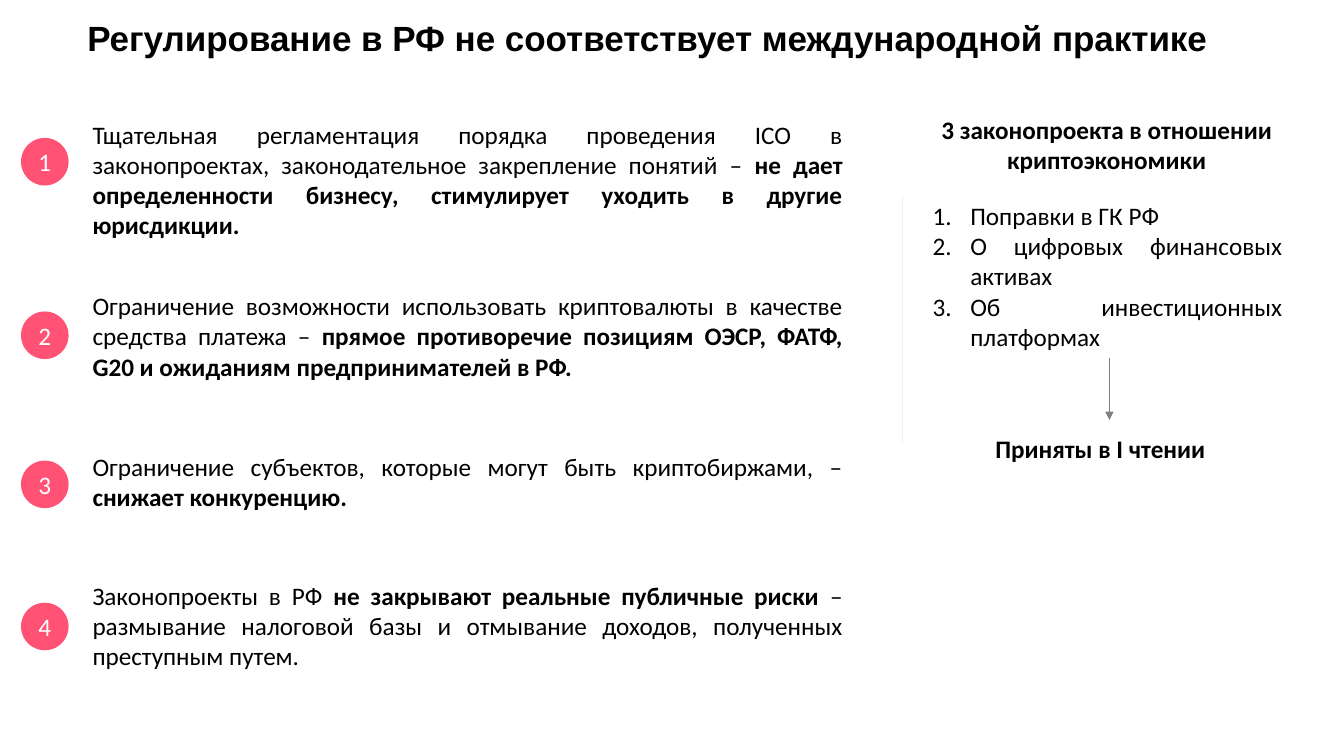
from dataclasses import dataclass

from lxml.etree import SubElement
from pptx import Presentation
from pptx.dml.color import RGBColor
from pptx.enum.shapes import MSO_CONNECTOR as Line, MSO_SHAPE as Form
from pptx.enum.text import MSO_ANCHOR as Anchor, MSO_AUTO_SIZE as Fit, PP_ALIGN as Align
from pptx.oxml.ns import qn
from pptx.shapes.connector import Connector
from pptx.slide import Slide
from pptx.text.text import TextFrame
from pptx.util import Pt

BLACK = RGBColor(0, 0, 0)
WHITE = RGBColor(255, 255, 255)
PINK = RGBColor(0xFF, 0x52, 0x75)
GREY = RGBColor(0x80, 0x80, 0x80)
PALE = RGBColor(0xF2, 0xF2, 0xF2)

DOT = 34
INDENT = 27


@dataclass
class Point:
    dot: float
    top: float
    high: float
    words: list[str]


@dataclass
class Note:
    left: float
    top: float
    wide: float
    high: float
    lines: list[list[str]]
    align: Align = Align.CENTER
    bold: bool = True
    font: str = "Calibri"
    size: float = 18


POINTS = [
    Point(98.5, 81.5, 94.5, [
        "Тщательная регламентация порядка проведения ICO в законопроектах, "
        "законодательное закрепление понятий – ",
        "не дает определенности бизнесу, стимулирует уходить в другие юрисдикции."]),
    Point(222.5, 204, 72.5, [
        "Ограничение возможности использовать криптовалюты в качестве средства платежа – ",
        "прямое противоречие позициям ОЭСР, ФАТФ, G20 и ожиданиям предпринимателей в РФ."]),
    Point(329, 318.5, 51, [
        "Ограничение субъектов, которые могут быть криптобиржами, – ",
        "снижает конкуренцию."]),
    Point(430.5, 411, 72.5, [
        "Законопроекты в РФ ",
        "не закрывают реальные публичные риски ",
        "– размывание налоговой базы и отмывание доходов, полученных преступным путем."]),
]

TITLE = Note(49, 8, 826.5, 67.5,
             [["Регулирование в РФ не соответствует международной практике"]],
             font="Arial", size=25)
HEAD = Note(641.5, 78, 298, 51, [["3 законопроекта в отношении криптоэкономики"]])
BILLS = Note(659, 139.5, 264, 116.5,
             [["Поправки в ГК РФ"],
              ["О цифровых финансовых активах"],
              ["Об инвестиционных платформах"]],
             align=Align.JUSTIFY, bold=False)
STATUS = Note(659, 306, 254, 29, [["Приняты в I чтении"]])


def add_note(slide: Slide, note: Note) -> TextFrame:
    box = slide.shapes.add_textbox(
        Pt(note.left), Pt(note.top), Pt(note.wide), Pt(note.high))
    frame = box.text_frame
    frame.word_wrap = True
    frame.auto_size = Fit.SHAPE_TO_FIT_TEXT
    frame.text = "\n".join(words[0] for words in note.lines)
    for para, words in zip(frame.paragraphs, note.lines):
        para.alignment = note.align
        for word in words[1:]:
            para.add_run().text = word
        for i, run in enumerate(para.runs):
            run.font.name = note.font
            run.font.size = Pt(note.size)
            run.font.bold = note.bold != (i % 2 == 1)
            run.font.color.rgb = BLACK
    return frame


def number(frame: TextFrame) -> None:
    for para in frame.paragraphs:
        props = para._p.get_or_add_pPr()
        props.set("marL", str(Pt(INDENT)))
        props.set("indent", str(-Pt(INDENT)))
        SubElement(props, qn("a:buFont"), typeface="+mj-lt")
        SubElement(props, qn("a:buAutoNum"), type="arabicPeriod")


def add_dot(slide: Slide, top: float, label: str) -> None:
    dot = slide.shapes.add_shape(Form.OVAL, Pt(15), Pt(top), Pt(DOT), Pt(DOT))
    dot.shadow.inherit = False
    dot.fill.solid()
    dot.fill.fore_color.rgb = PINK
    dot.line.fill.background()
    frame = dot.text_frame
    frame.margin_left = frame.margin_right = 0
    frame.vertical_anchor = Anchor.MIDDLE
    frame.text = label
    para = frame.paragraphs[0]
    para.alignment = Align.CENTER
    font = para.runs[0].font
    font.name = "Calibri"
    font.size = Pt(18)
    font.color.rgb = WHITE


def add_line(slide: Slide, x: float, top: float, end: float, color: RGBColor) -> Connector:
    line = slide.shapes.add_connector(Line.STRAIGHT, Pt(x), Pt(top), Pt(x), Pt(end))
    line.line.color.rgb = color
    line.line.width = Pt(0.5)
    SubElement(line._element.spPr, qn("a:effectLst"))
    return line


def main() -> None:
    deck = Presentation()
    deck.slide_width, deck.slide_height = Pt(960), Pt(540)
    slide = deck.slides.add_slide(deck.slide_layouts[6])
    add_note(slide, TITLE)
    for i, point in enumerate(POINTS, 1):
        add_dot(slide, point.dot, str(i))
        add_note(slide, Note(59, point.top, 550, point.high, [point.words],
                             align=Align.JUSTIFY, bold=False))
    add_note(slide, HEAD)
    number(add_note(slide, BILLS))
    add_line(slide, 644.5, 139.5, 317.5, PALE)
    arrow = add_line(slide, 792.5, 256, 300, GREY)
    SubElement(arrow.line._get_or_add_ln(), qn("a:tailEnd"), type="triangle")
    add_note(slide, STATUS)
    deck.save("out.pptx")


if __name__ == "__main__":
    main()
